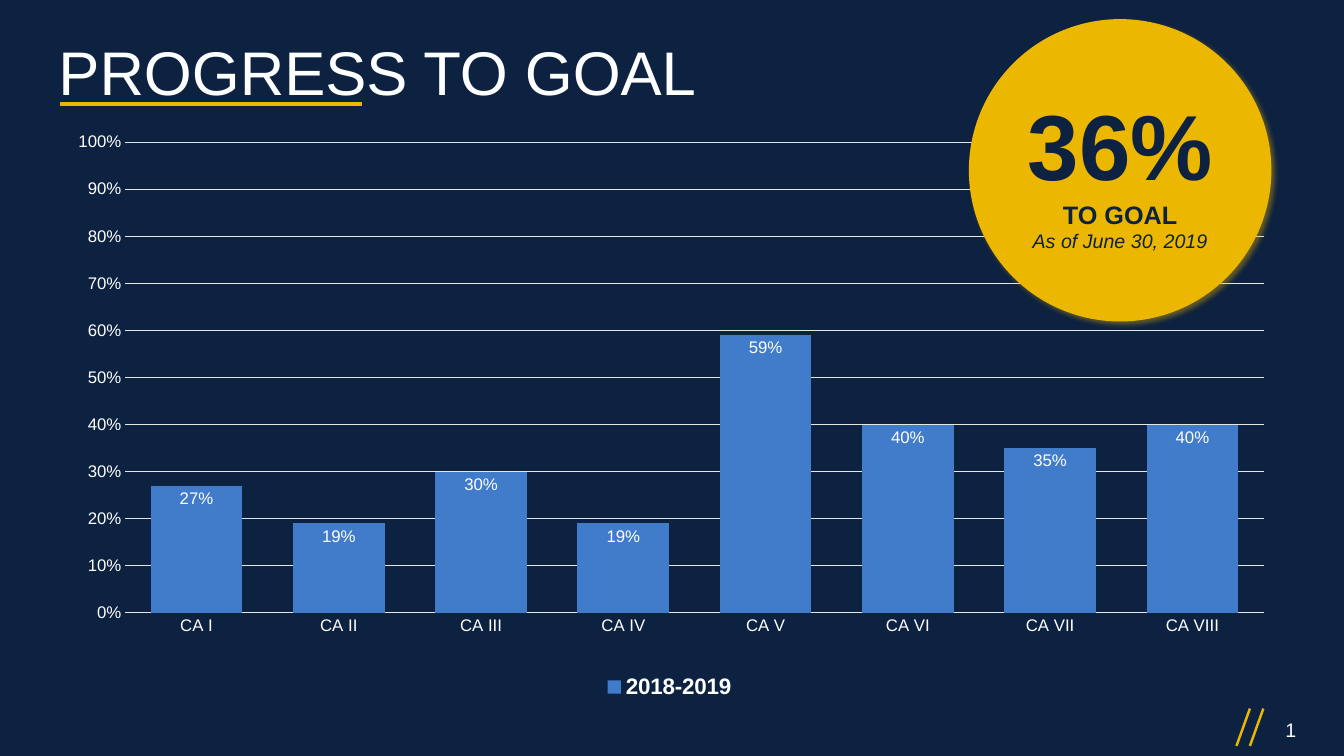
import pptx
import pptx.chart.data
import pptx.dml.color
import pptx.enum.chart
import pptx.enum.shapes
import pptx.enum.text
import pptx.oxml
import pptx.oxml.ns
import pptx.util
from lxml import etree

COLORS = {"navy": "0D2140", "white": "FEFFFF", "gold": "EBB700",
          "slash": "EBB800", "blue": "407CCA", "grid": "E5E6E6", "gray": "555659"}
FONT = "Arial"
PROGRESS = {"CA I": 0.27, "CA II": 0.19, "CA III": 0.3, "CA IV": 0.19,
            "CA V": 0.59, "CA VI": 0.4, "CA VII": 0.35, "CA VIII": 0.4}
PLOT_AREA = {"x": 0.054, "y": 0.028, "w": 0.933, "h": 0.815}


def rgb(name):
    return pptx.dml.color.RGBColor.from_string(COLORS[name])


class Deck:
    """Style and current slide; lengths are columns and rows of a 100 by 100 grid."""

    def __init__(self):
        self.prs = pptx.Presentation()
        self.prs.slide_width = pptx.util.Inches(13.33)
        self.prs.slide_height = pptx.util.Inches(7.5)

    def add_slide(self):
        self.s = self.prs.slides.add_slide(self.prs.slide_layouts[5])
        self.s.background.fill.solid()
        self.s.background.fill.fore_color.rgb = rgb("navy")

    def box(self, x, y, w, h):
        width, height = self.prs.slide_width, self.prs.slide_height
        return [int(v * side / 100)
                for v, side in zip((x, y, w, h), (width, height) * 2)]

    def font(self, font, size, color, bold=False, italic=False):
        font.name, font.size = FONT, pptx.util.Pt(size)
        font.bold, font.italic = bold, italic
        font.color.rgb = rgb(color)

    def fill_text(self, sp, lines, align="LEFT"):
        """Fill a shape with (text, size, color, bold, italic) paragraphs."""
        tf = sp.text_frame
        tf.word_wrap = True
        tf.vertical_anchor = pptx.enum.text.MSO_ANCHOR.MIDDLE
        for i, (text, *style) in enumerate(lines):
            p = tf.add_paragraph() if i else tf.paragraphs[0]
            p.text = text
            p.alignment = pptx.enum.text.PP_ALIGN[align]
            self.font(p.font, *style)
        return tf

    def title(self, text, *place):
        sp = self.s.shapes.title
        sp.left, sp.top, sp.width, sp.height = self.box(*place)
        tf = self.fill_text(sp, [(text, 44, "white")])
        tf.auto_size = pptx.enum.text.MSO_AUTO_SIZE.NONE
        tf.paragraphs[0].line_spacing = 0.9

    def text(self, text, size, *place):
        sp = self.s.shapes.add_textbox(*self.box(*place))
        self.fill_text(sp, [(text, size, "white")])

    def line(self, x1, y1, x2, y2, color, width):
        sp = self.s.shapes.add_connector(pptx.enum.shapes.MSO_CONNECTOR.STRAIGHT,
                                         *self.box(x1, y1, x2, y2))
        sp.line.color.rgb = rgb(color)
        sp.line.width = pptx.util.Pt(width)
        etree.SubElement(sp._element.spPr, pptx.oxml.ns.qn("a:effectLst"))

    def badge(self, lines, *place):
        """Gold disc with a soft glow-like shadow."""
        sp = self.s.shapes.add_shape(pptx.enum.shapes.MSO_SHAPE.OVAL, *self.box(*place))
        sp.fill.solid()
        sp.fill.fore_color.rgb = rgb("gold")
        sp.line.fill.background()
        sp._element.spPr.append(pptx.oxml.parse_xml(
            f'<a:effectLst {pptx.oxml.ns.nsdecls("a")}>'
            f'<a:outerShdw blurRad="{pptx.util.Pt(4)}" dist="{pptx.util.Pt(3)}" '
            'dir="2700000" algn="tl" rotWithShape="0">'
            f'<a:srgbClr val="{COLORS["gold"]}"><a:alpha val="40000"/></a:srgbClr>'
            '</a:outerShdw></a:effectLst>'))
        self.fill_text(sp, lines, "CENTER")

    def grid_line(self, line):
        line.color.rgb = rgb("grid")
        line.width = pptx.util.Pt(0.75)

    def column_chart(self, name, values, *place):
        enum = pptx.enum.chart
        data = pptx.chart.data.CategoryChartData(number_format="0%")
        data.categories = list(values)
        data.add_series(name, list(values.values()))
        chart = self.s.shapes.add_chart(enum.XL_CHART_TYPE.COLUMN_CLUSTERED,
                                        *self.box(*place), data).chart
        self.font(chart.font, 10, "gray")
        chart.has_title = False
        chart.has_legend = True
        chart.legend.position = enum.XL_LEGEND_POSITION.BOTTOM
        chart.legend.include_in_layout = False
        self.font(chart.legend.font, 16, "white", True)

        for axis in (chart.category_axis, chart.value_axis):
            axis.major_tick_mark = axis.minor_tick_mark = enum.XL_TICK_MARK.NONE
            self.font(axis.tick_labels.font, 12, "white")
        self.grid_line(chart.category_axis.format.line)
        axis = chart.value_axis
        axis.minimum_scale, axis.maximum_scale, axis.major_unit = 0, 1, 0.1
        axis.format.line.fill.background()
        axis.has_major_gridlines = True
        self.grid_line(axis.major_gridlines.format.line)
        axis.tick_labels.number_format = "0%"
        axis.tick_labels.number_format_is_linked = False

        plot = chart.plots[0]
        plot.gap_width, plot.overlap, plot.vary_by_categories = 55, -33, False
        fill = plot.series[0].format.fill
        fill.solid()
        fill.fore_color.rgb = rgb("blue")
        labels = plot.series[0].data_labels
        labels.show_value = True
        labels.position = enum.XL_LABEL_POSITION.INSIDE_END
        labels.number_format, labels.number_format_is_linked = "0%", False
        self.font(labels.font, 12, "white")
        self.place_plot(chart)

    def place_plot(self, chart):
        """Fix the inner plot area to its shares of the chart."""
        area = chart._chartSpace.chart.plotArea
        for layout in area.findall(pptx.oxml.ns.qn("c:layout")):
            area.remove(layout)
        modes = "".join(f'<c:{k}Mode val="edge"/>' for k in "xy")
        sizes = "".join(f'<c:{k} val="{v}"/>' for k, v in PLOT_AREA.items())
        area.insert(0, pptx.oxml.parse_xml(
            f'<c:layout {pptx.oxml.ns.nsdecls("c")}><c:manualLayout>'
            f'<c:layoutTarget val="inner"/>{modes}{sizes}</c:manualLayout></c:layout>'))


def main():
    deck = Deck()
    deck.add_slide()
    for x in (94, 93):
        deck.line(x, 93.73, x - 1, 98.67, "slash", 1.75)
    deck.text("1", 14, 94.9, 93.87, 4.65, 5.33)
    deck.title("PROGRESS TO GOAL", 3.6, 5.07, 67.37, 9.73)
    deck.line(4.43, 13.73, 26.93, 13.73, "gold", 3)
    deck.column_chart("2018-2019", PROGRESS, 4.43, 16.67, 90.77, 76.4)
    deck.badge([("36%", 66, "navy", True),
                ("TO GOAL", 18, "navy", True),
                ("As of June 30, 2019", 14, "navy", False, True)],
               72.09, 2.53, 22.51, 40)
    deck.prs.save("out.pptx")


if __name__ == "__main__":
    main()
